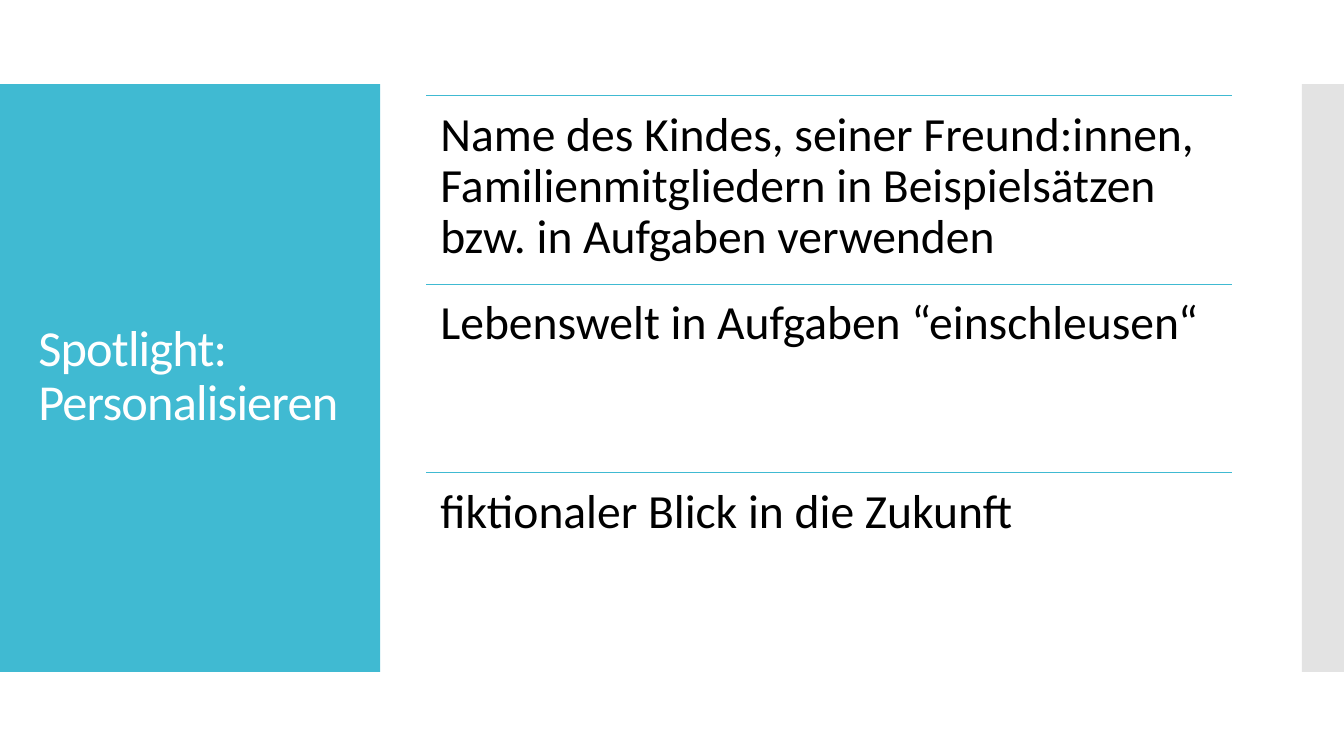
from lxml.etree import SubElement
from pptx import Presentation
from pptx.dml.color import RGBColor
from pptx.enum.shapes import MSO_CONNECTOR as Connector, MSO_SHAPE as Preset
from pptx.enum.text import MSO_ANCHOR as Anchor, MSO_AUTO_SIZE as AutoSize, PP_ALIGN as Align
from pptx.oxml.ns import qn
from pptx.util import Cm, Pt

# Content
TITLE_LINES = ["Spotlight:", "Personalisieren"]
IDEAS = [
    "Name des Kindes, seiner Freund:innen, Familienmitgliedern in Beispielsätzen bzw. in Aufgaben verwenden",
    "Lebenswelt in Aufgaben “einschleusen“",
    "fiktionaler Blick in die Zukunft",
]

# Look and layout, lengths in cm
FONT = "Calibri"
TEAL, GREY, WHITE, BLACK = "40BAD2", "C8C8C8", "FFFFFF", "000000"
SLIDE_W, SLIDE_H = 33.87, 19.05
BAND_TOP, BAND_H = 2.12, 14.81
TITLE_PANEL_W, EDGE_PANEL_W = 9.58, 1.06
TITLE_BOX = (0.71, 3.12, 8.18, 12.78)
IDEAS_LEFT, IDEAS_TOP, IDEAS_W, IDEA_H = 10.74, 2.41, 20.32, 4.75
IDEA_INSET = 0.36


def paint(color_format, hex_color):
    color_format.rgb = RGBColor.from_string(hex_color)


def add_panel(left, width, color):
    panel = slide.shapes.add_shape(
        Preset.RECTANGLE, Cm(left), Cm(BAND_TOP), Cm(width), Cm(BAND_H))
    panel.shadow.inherit = False
    panel.fill.solid()
    paint(panel.fill.fore_color, color)
    panel.line.fill.background()
    return panel


def add_text(paragraph, text, size, color):
    run = paragraph.add_run()
    run.text = text
    run.font.name = FONT
    run.font.size = Pt(size)
    paint(run.font.color, color)
    return run


prs = Presentation()
prs.slide_width, prs.slide_height = Cm(SLIDE_W), Cm(SLIDE_H)
slide = prs.slides.add_slide(prs.slide_layouts[5])

# Side panels, the right one half transparent
add_panel(0, TITLE_PANEL_W, TEAL)
edge_panel = add_panel(SLIDE_W - EDGE_PANEL_W, EDGE_PANEL_W, GREY)
edge_color = edge_panel.element.spPr.find(qn("a:solidFill"))[0]
SubElement(edge_color, qn("a:alpha")).set("val", "50000")

# Title, brought in front of its panel
title = slide.shapes.title
title.element.getparent().append(title.element)
title.left, title.top, title.width, title.height = map(Cm, TITLE_BOX)
title_frame = title.text_frame
title_frame.word_wrap = True
title_frame.auto_size = AutoSize.NONE
title_frame.vertical_anchor = Anchor.MIDDLE
heading = title_frame.paragraphs[0]
heading.alignment = Align.LEFT
heading.line_spacing = 0.9
for number, line in enumerate(TITLE_LINES):
    if number:
        heading.add_line_break()
    run = add_text(heading, line, 36, WHITE)
    run.font._element.set("spc", "-60")

# Ideas, each under its own rule
for number, idea in enumerate(IDEAS):
    top = Cm(IDEAS_TOP + number * IDEA_H)
    rule = slide.shapes.add_connector(
        Connector.STRAIGHT, Cm(IDEAS_LEFT), top, Cm(IDEAS_LEFT + IDEAS_W), top)
    paint(rule.line.color, TEAL)
    rule.line.width = Pt(0.85)
    SubElement(rule.element.spPr, qn("a:effectLst"))

    idea_box = slide.shapes.add_textbox(Cm(IDEAS_LEFT), top, Cm(IDEAS_W), Cm(IDEA_H))
    idea_frame = idea_box.text_frame
    idea_frame.word_wrap = True
    idea_frame.margin_left = idea_frame.margin_right = Cm(IDEA_INSET)
    idea_frame.margin_top = idea_frame.margin_bottom = Cm(IDEA_INSET)
    paragraph = idea_frame.paragraphs[0]
    paragraph.line_spacing = 0.9
    add_text(paragraph, idea, 34, BLACK)

prs.save("out.pptx")
